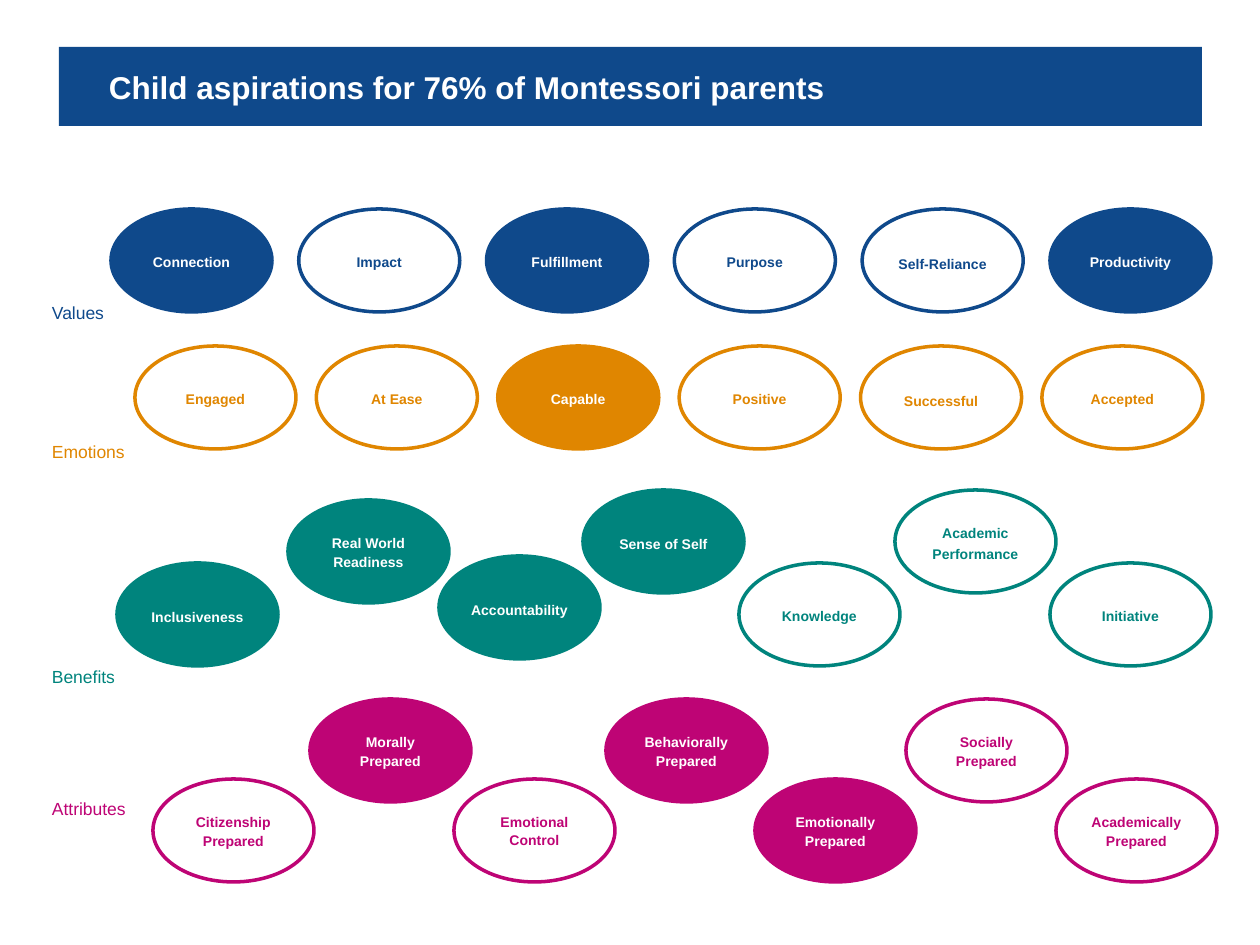
import pptx
import pptx.dml.color
import pptx.enum.shapes
import pptx.enum.text
import pptx.oxml
import pptx.oxml.ns
import pptx.util

RGBColor = pptx.dml.color.RGBColor
MSO_ANCHOR = pptx.enum.text.MSO_ANCHOR
MSO_AUTO_SIZE = pptx.enum.text.MSO_AUTO_SIZE
PP_ALIGN = pptx.enum.text.PP_ALIGN

BLUE = RGBColor(0x0F, 0x49, 0x8B)
ORANGE = RGBColor(0xE0, 0x86, 0x00)
TEAL = RGBColor(0x00, 0x84, 0x7D)
MAGENTA = RGBColor(0xBE, 0x04, 0x75)
WHITE = RGBColor(0xFF, 0xFF, 0xFF)

EMU_PER_PX = 914400 / 126
FONT = "Arial"
OVAL_WIDTH, OVAL_HEIGHT = 161, 103
LABEL_LEFT, LABEL_HEIGHT = 52, 21

TITLE = "Child aspirations for 76% of Montessori parents"


def even_row(first, last, top, count=6):
    return [(first + (last - first) * i / (count - 1), top) for i in range(count)]


# Each level: label, colour, label top and width, oval names, filled names, oval positions
LEVELS = [
    ("Values", BLUE, 302, 129,
     ["Connection", "Impact", "Fulfillment", "Purpose", "Self-Reliance", "Productivity"],
     {"Connection", "Fulfillment", "Productivity"},
     even_row(111, 1050, 209)),
    ("Emotions", ORANGE, 441, 129,
     ["Engaged", "At Ease", "Capable", "Positive", "Successful", "Accepted"],
     {"Capable"},
     even_row(135, 1042, 346)),
    ("Benefits", TEAL, 666, 179,
     ["Inclusiveness", "Real World\nReadiness", "Accountability", "Sense of Self",
      "Knowledge", "Academic\nPerformance", "Initiative"],
     {"Inclusiveness", "Real World\nReadiness", "Accountability", "Sense of Self"},
     [(117, 563), (288, 500), (439, 556), (583, 490), (739, 563), (895, 490), (1050, 563)]),
    ("Attributes", MAGENTA, 798, 147,
     ["Citizenship\nPrepared", "Morally\nPrepared", "Emotional\nControl",
      "Behaviorally\nPrepared", "Emotionally\nPrepared", "Socially\nPrepared",
      "Academically\nPrepared"],
     {"Morally\nPrepared", "Behaviorally\nPrepared", "Emotionally\nPrepared"},
     [(153, 779), (310, 699), (454, 779), (606, 699), (755, 779), (906, 699), (1056, 779)]),
]

LINE_SPACING = 11
SPECIAL_LINE_SPACING = {
    "Self-Reliance": 14, "Successful": 14,
    "Inclusiveness": 12, "Accountability": 12, "Sense of Self": 12,
    "Academic\nPerformance": 12, "Emotional\nControl": 10,
}


def px(*lengths):
    return [pptx.util.Emu(round(length * EMU_PER_PX)) for length in lengths]


def write_text(shape, text, size, color, bold=False, align=PP_ALIGN.LEFT,
               spacing=None, margins=(0, 0)):
    """Fill the shape with text; margins are horizontal and vertical, in px."""
    frame = shape.text_frame
    frame.text = text
    frame.vertical_anchor = MSO_ANCHOR.MIDDLE
    frame.margin_left, frame.margin_top = px(*margins)
    frame.margin_right, frame.margin_bottom = px(*margins)
    for paragraph in frame.paragraphs:
        paragraph.alignment = align
        if spacing:
            paragraph.line_spacing = pptx.util.Pt(spacing)
        for run in paragraph.runs:
            run.font.name = FONT
            run.font.size = pptx.util.Pt(size)
            run.font.bold = bold
            run.font.color.rgb = color


def add_title(slide):
    title = slide.shapes.title
    title.left, title.top, title.width, title.height = px(59, 47, 1143, 79)
    title._element.spPr.append(pptx.oxml.parse_xml(
        f'<a:prstGeom {pptx.oxml.ns.nsdecls("a")} prst="roundRect"><a:avLst>'
        '<a:gd name="adj" fmla="val 8000"/></a:avLst></a:prstGeom>'))
    title.fill.solid()
    title.fill.fore_color.rgb = BLUE
    write_text(title, TITLE, 18, WHITE, bold=True, margins=(50, 6))
    title.text_frame.auto_size = MSO_AUTO_SIZE.NONE


def add_oval(slide, name, left, top, color, filled):
    oval = slide.shapes.add_shape(pptx.enum.shapes.MSO_SHAPE.OVAL,
                                  *px(left, top, OVAL_WIDTH, OVAL_HEIGHT))
    oval.shadow.inherit = False
    oval.line.color.rgb = color
    oval.line.width = pptx.util.Pt(2)
    if filled:
        oval.fill.solid()
        oval.fill.fore_color.rgb = color
    else:
        oval.fill.background()
    write_text(oval, name, 8, WHITE if filled else color, bold=True, align=PP_ALIGN.CENTER,
               spacing=SPECIAL_LINE_SPACING.get(name, LINE_SPACING))
    oval.text_frame.word_wrap = False


def add_label(slide, text, color, top, width):
    label = slide.shapes.add_textbox(*px(LABEL_LEFT, top, width, LABEL_HEIGHT))
    write_text(label, text, 10, color)
    label.text_frame.word_wrap = True
    label.text_frame.auto_size = MSO_AUTO_SIZE.SHAPE_TO_FIT_TEXT


def main():
    presentation = pptx.Presentation()
    presentation.slide_width, presentation.slide_height = px(1260, 945)
    slide = presentation.slides.add_slide(presentation.slide_layouts[5])
    add_title(slide)
    for label, color, label_top, label_width, names, filled, positions in LEVELS:
        for name, (left, top) in zip(names, positions):
            add_oval(slide, name, left, top, color, name in filled)
        add_label(slide, label, color, label_top, label_width)
    presentation.save("out.pptx")


if __name__ == "__main__":
    main()
